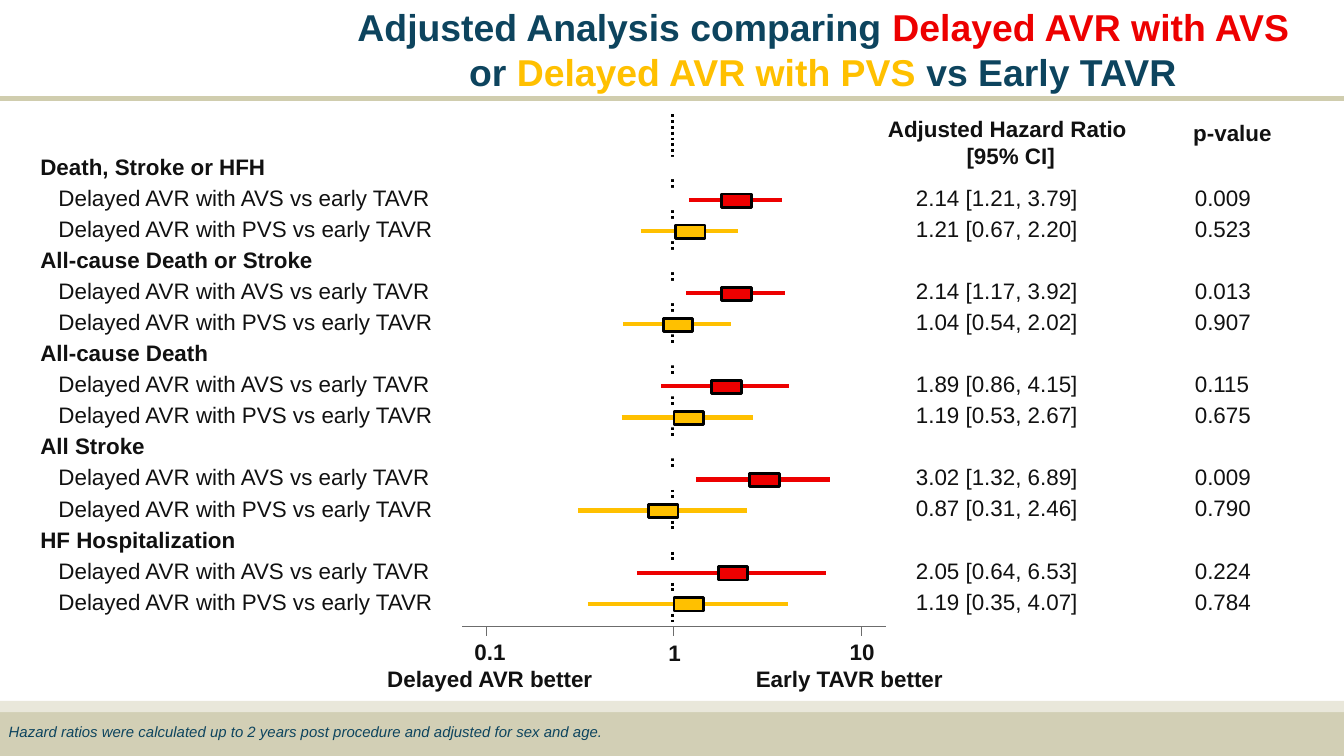
from math import log10

from lxml.etree import SubElement
from pptx import Presentation
from pptx.dml.color import RGBColor
from pptx.enum.dml import MSO_LINE_DASH_STYLE as Dash
from pptx.enum.shapes import MSO_CONNECTOR as Connector, MSO_SHAPE as Shape
from pptx.enum.text import PP_ALIGN as Align
from pptx.oxml.ns import qn
from pptx.util import Inches, Pt

NAVY, RED, GOLD, INK = "0D445E", "ED0000", "FFC000", "111111"
BLACK, GREY, WHITE = "000000", "6C6C6C", "FFFFFF"
SAND, PALE, RULE = "D2CFB5", "E9E7DA", "D0CDAE"
COLUMNS, ROWS = 100, 56.25
FIRST_ROW, ROW_PITCH, ROW_GAP = 12.5, 2.31, 0.83
ONE, DECADE, REFERENCE = 50.1, 13.95, 50.04
AXIS_LEFT, AXIS_RIGHT = 34.4, 65.9
COMPARISONS = [("Delayed AVR with AVS vs early TAVR", RED),
               ("Delayed AVR with PVS vs early TAVR", GOLD)]
OUTCOMES = [
    ("Death, Stroke or HFH",
     [("2.14", "1.21", "3.79", "0.009"), ("1.21", "0.67", "2.20", "0.523")]),
    ("All-cause Death or Stroke",
     [("2.14", "1.17", "3.92", "0.013"), ("1.04", "0.54", "2.02", "0.907")]),
    ("All-cause Death",
     [("1.89", "0.86", "4.15", "0.115"), ("1.19", "0.53", "2.67", "0.675")]),
    ("All Stroke",
     [("3.02", "1.32", "6.89", "0.009"), ("0.87", "0.31", "2.46", "0.790")]),
    ("HF Hospitalization",
     [("2.05", "0.64", "6.53", "0.224"), ("1.19", "0.35", "4.07", "0.784")]),
]


def color(value):
    return RGBColor.from_string(value)


def ratio_x(ratio):
    return ONE + DECADE * log10(float(ratio))


def row_y(row):
    return FIRST_ROW + ROW_PITCH * row


class ForestSlide:
    """Holds the style and the current slide, measured on a grid."""

    font = "Arial"

    def __init__(self, presentation):
        self.column = presentation.slide_width / COLUMNS
        self.row = presentation.slide_height / ROWS
        self.slide = presentation.slides.add_slide(presentation.slide_layouts[6])

    def place(self, x, y, *size):
        scales = (self.column, self.row) * 2
        return [round(value * scale) for value, scale in zip((x, y, *size), scales)]

    def stroke(self, shape, ink, width, dash=None):
        shape.line.color.rgb = color(ink)
        shape.line.width = Pt(width)
        if dash:
            shape.line.dash_style = dash

    def line(self, x1, y1, x2, y2, ink, width):
        connector = self.slide.shapes.add_connector(
            Connector.STRAIGHT, *self.place(x1, y1, x2, y2))
        self.stroke(connector, ink, width)
        SubElement(connector._element.spPr, qn("a:effectLst"))

    def fill(self, shape, ink):
        shape.shadow.inherit = False
        shape.fill.solid()
        shape.fill.fore_color.rgb = color(ink)

    def box(self, x, y, width, height, ink, outline=None):
        shape = self.slide.shapes.add_shape(
            Shape.RECTANGLE, *self.place(x, y, width, height))
        self.fill(shape, ink)
        if outline:
            self.stroke(shape, outline, 1.5)
        else:
            shape.line.fill.background()

    def outline(self, contours, closed):
        first, *others = contours
        builder = self.slide.shapes.build_freeform(*self.place(*first[0]))
        builder.add_line_segments([self.place(*point) for point in first[1:]], closed)
        for start, *points in others:
            builder.move_to(*self.place(*start))
            builder.add_line_segments([self.place(*point) for point in points], closed)
        return builder.convert_to_shape()

    def dots(self, spans):
        shape = self.outline([[(REFERENCE, top), (REFERENCE, bottom)]
                              for top, bottom in spans], False)
        shape.shadow.inherit = False
        shape.fill.background()
        self.stroke(shape, BLACK, 1.57, Dash.ROUND_DOT)

    def bands(self, spans):
        shape = self.outline(
            [[(AXIS_RIGHT, top), (AXIS_LEFT, top), (AXIS_LEFT, bottom),
              (AXIS_RIGHT, bottom)] for top, bottom in spans], True)
        self.fill(shape, WHITE)
        shape.line.fill.background()

    def style(self, run, size, ink, bold=False, italic=False):
        font = run.font
        font.name, font.size, font.bold, font.italic = self.font, Pt(size), bold, italic
        font.color.rgb = color(ink)

    def frame(self, x, y, width, height):
        frame = self.slide.shapes.add_textbox(
            *self.place(x, y, width, height)).text_frame
        frame.word_wrap = True
        frame.margin_left = frame.margin_right = 0
        frame.margin_top = frame.margin_bottom = 0
        return frame

    def text(self, lines, x, y, width, height, pitch=14.3, size=12, ink=INK,
             bold=False, italic=False, align=Align.LEFT):
        frame = self.frame(x, y, width, height)
        frame.text = "\n".join(lines)
        for paragraph in frame.paragraphs:
            paragraph.alignment = align
            paragraph.line_spacing = Pt(pitch)
            for run in paragraph.runs:
                self.style(run, size, ink, bold, italic)
        return frame.paragraphs

    def indent(self, paragraph, left, first=0):
        properties = paragraph._p.get_or_add_pPr()
        properties.set("marL", str(round(left * self.column)))
        properties.set("indent", str(round(first * self.column)))

    def title(self, parts, x, y, width, height):
        paragraph = self.frame(x, y, width, height).paragraphs[0]
        self.indent(paragraph, 8.5, -8.3)
        paragraph.line_spacing = Pt(24)
        for words, ink in parts:
            run = paragraph.add_run()
            run.text = words
            self.style(run, 20, ink, bold=True)

    def estimate(self, row, ratio, low, high, ink):
        y = row_y(row) + 0.08
        self.line(ratio_x(low), y, ratio_x(high), y, ink, 2.25)
        self.box(ratio_x(ratio) - 1, y - 0.45, 2.2, 1, ink, BLACK)

    def reference_line(self, top, bottom, rows):
        bands = [(row_y(row) - ROW_GAP, row_y(row) + ROW_GAP) for row in range(rows)]
        edges = [top] + [edge for band in bands for edge in band] + [bottom]
        gaps = list(zip(edges[::2], edges[1::2]))
        for spans in (gaps[-2:], gaps[:1], gaps[1:-2]):
            self.dots(spans)
        self.bands(bands)

    def axis(self, y):
        self.line(AXIS_LEFT, y, AXIS_RIGHT, y, GREY, 0.25)
        for tick in (0.1, 1, 10):
            self.line(ratio_x(tick), y, ratio_x(tick), y + 0.75, GREY, 0.25)


def main():
    presentation = Presentation()
    presentation.slide_width, presentation.slide_height = Inches(10), Inches(5.625)
    forest = ForestSlide(presentation)
    forest.box(0, 53, 100, 3.25, SAND)
    forest.box(0, 52.15, 100, 0.85, PALE)
    forest.line(0, 7.33, 100, 7.33, RULE, 3)
    forest.title([("Adjusted Analysis comparing ", NAVY),
                  ("Delayed AVR with AVS ", RED), ("or ", NAVY),
                  ("Delayed AVR with PVS ", GOLD), ("vs Early TAVR", NAVY)],
                 26.4, 0.33, 70.3, 6.8)

    forest.reference_line(8.5, 46.5, 3 * len(OUTCOMES))
    forest.axis(46.6)

    pitch = ROW_PITCH * 7.2
    text_top = FIRST_ROW - 1.42
    labels = []
    for group, (outcome, results) in enumerate(OUTCOMES):
        labels += [outcome] + [label for label, _ in COMPARISONS]
        first = 3 * group + 1
        for offset, (ratio, low, high, _) in enumerate(results):
            forest.estimate(first + offset, ratio, low, high, COMPARISONS[offset][1])
        top = text_top + ROW_PITCH * first
        forest.text([f"{ratio} [{low}, {high}]" for ratio, low, high, _ in results],
                    68.15, top, 12.3, 4.7, pitch)
        forest.text([p_value for *_, p_value in results], 88.9, top, 4.5, 4.7, pitch)

    paragraphs = forest.text(labels, 3, text_top, 29.5, 34.7, pitch)
    for index, paragraph in enumerate(paragraphs):
        if index % 3 == 0:
            paragraph.runs[0].font.bold = True
        else:
            forest.indent(paragraph, 1.35)

    heading = {"bold": True, "align": Align.CENTER}
    ratio_heading = forest.text(["Adjusted Hazard Ratio", "[95% CI]"],
                                65.9, 8.58, 18.1, 4, **heading)
    forest.indent(ratio_heading[1], 0.5)
    forest.text(["p-value"], 88.65, 8.88, 6.1, 2, **heading)
    forest.text(["0.1", "Delayed AVR better"], 28.35, 47.5, 16.2, 4, **heading)
    forest.text(["1"], 49.2, 47.55, 2, 2, **heading)
    right_end = forest.text(["10", "Early TAVR better"], 55.6, 47.5, 15.2, 4, **heading)
    forest.indent(right_end[0], 1.9)
    forest.text(["Hazard ratios were calculated up to 2 years post procedure "
                 "and adjusted for sex and age."],
                0.65, 53.8, 48, 1.6, pitch=9.2, size=8, ink=NAVY, italic=True)
    presentation.save("out.pptx")


if __name__ == "__main__":
    main()
